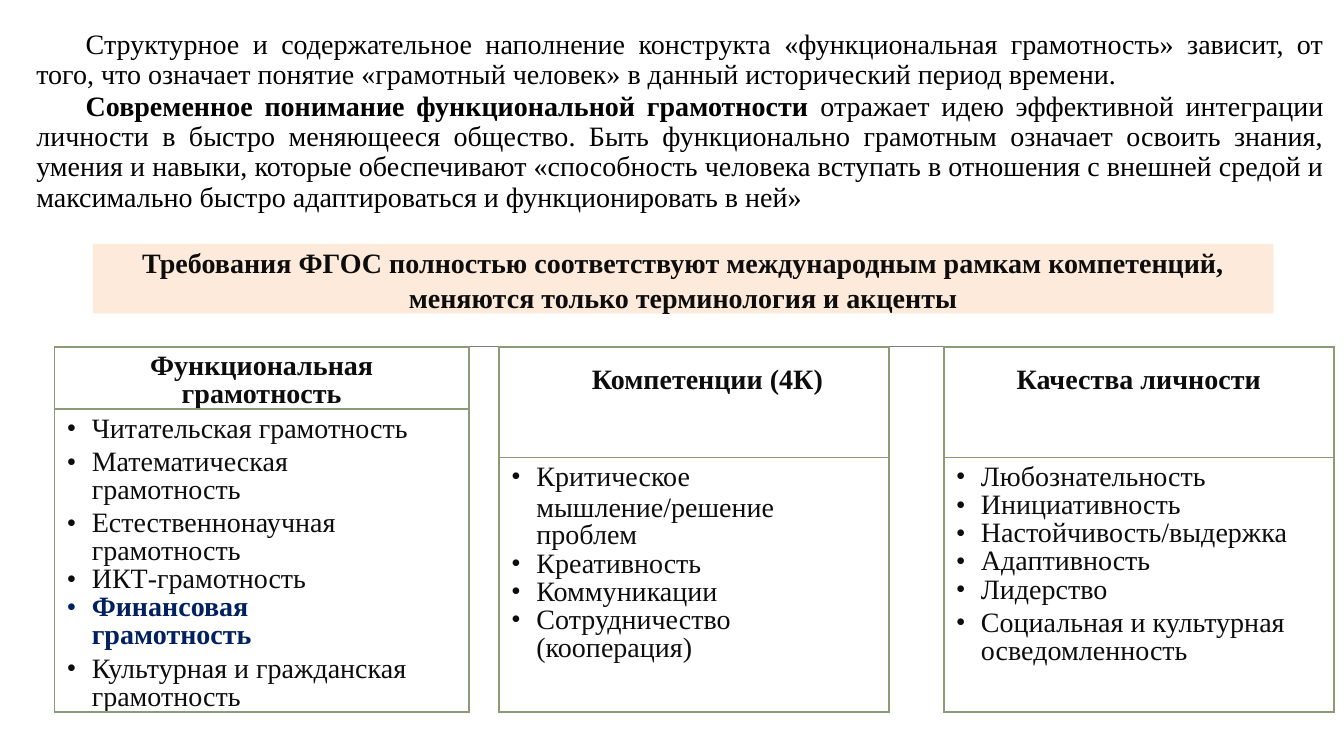
"""Build a slide on functional literacy: intro text, a banner and three boxed lists."""
from lxml import etree
from pptx import Presentation
from pptx.dml.color import RGBColor
from pptx.enum.text import MSO_ANCHOR, MSO_AUTO_SIZE, PP_ALIGN
from pptx.oxml.ns import qn
from pptx.util import Emu, Inches, Pt

CENTER, JUSTIFY, LEFT = PP_ALIGN.CENTER, PP_ALIGN.JUSTIFY, PP_ALIGN.LEFT
TOP, NO_AUTOFIT = MSO_ANCHOR.TOP, MSO_AUTO_SIZE.NONE

FONT, SIZE = "Times New Roman", 20
BLACK, INK, NAVY = "000000", "0D0D0D", "002060"
PEACH, GREEN, GRAY = "FDEADA", "8A9B76", "7E7E7E"

INTRO = [
    [("Структурное и содержательное наполнение конструкта «функциональная грамотность» "
      "зависит, от того, что означает понятие «грамотный человек» в данный исторический "
      "период времени.", False)],
    [("Современное понимание функциональной грамотности ", True),
     ("отражает идею эффективной интеграции личности в быстро меняющееся общество. Быть "
      "функционально грамотным означает освоить знания, умения и навыки, которые "
      "обеспечивают «способность человека вступать в отношения с внешней средой и "
      "максимально быстро адаптироваться и функционировать в ней»", False)],
]
BANNER = [
    "Требования ФГОС полностью соответствуют международным рамкам компетенций,",
    "меняются только терминология и акценты",
]
KEY_ITEM = "Финансовая грамотность"
CONTINUATION = "мышление/решение проблем"
GROUPS = [
    {"heading": ["Функциональная", "грамотность"], "align": CENTER, "indent": 0,
     "heading_top": 0.06, "heading_rows": 1, "right": 0.56,
     "items": [("Читательская грамотность", 5), ("Математическая грамотность", 3.9),
               ("Естественнонаучная грамотность", 3.6), ("ИКТ-грамотность", 0.1),
               (KEY_ITEM, 0.1), ("Культурная и гражданская грамотность", 3.9)]},
    {"heading": ["Компетенции (4К)"], "align": LEFT, "indent": 0.92,
     "heading_top": 0.2, "heading_rows": 2, "right": 0.3,
     "items": [("Критическое", 5), (CONTINUATION, 1.9), ("Креативность", 0.1),
               ("Коммуникации", 0.1), ("Сотрудничество (кооперация)", 0.1)]},
    {"heading": ["Качества личности"], "align": CENTER, "indent": 0,
     "heading_top": 0.2, "heading_rows": 2, "right": 0.3,
     "items": [("Любознательность", 5), ("Инициативность", 0.2),
               ("Настойчивость/выдержка", 0.1), ("Адаптивность", 0.1),
               ("Лидерство", 0.1), ("Социальная и культурная осведомленность", 3.9)]},
]
COLUMNS = [4.11, 0.3, 3.87, 0.54, 3.87]
ROWS = [0.61, 0.47, 2.53]
LAST_ROW = len(ROWS) - 1
PLAIN_TABLE = "{2D5ABB26-0587-4C30-8999-92F81FD0307C}"
THICK, THIN = (GREEN, 1.5), (GREEN, 0.75)


def color(value):
    return RGBColor.from_string(value)


def place(shape, left, top, width, height):
    shape.left, shape.top = Inches(left), Inches(top)
    shape.width, shape.height = Inches(width), Inches(height)


def write(frame, index, runs, align=LEFT, left=0, indent=0, before=0,
          spacing=0.9, ink=INK, bullet=False):
    paragraph = frame.paragraphs[0] if index == 0 else frame.add_paragraph()
    paragraph.alignment = align
    paragraph.line_spacing = spacing
    paragraph.space_before, paragraph.space_after = Pt(before), Pt(0)
    properties = paragraph._p.get_or_add_pPr()
    properties.set("marL", str(Inches(left)))
    properties.set("indent", str(Inches(indent)))
    if bullet:
        etree.SubElement(properties, qn("a:buFont")).set("typeface", FONT)
        etree.SubElement(properties, qn("a:buChar")).set("char", "•")
    else:
        etree.SubElement(properties, qn("a:buNone"))
    for text, bold in runs:
        run = paragraph.add_run()
        run.text = text
        run.font.name, run.font.size = FONT, Pt(SIZE)
        run.font.bold = bold
        run.font.color.rgb = color(ink)


def set_borders(cell, **edges):
    properties = cell._tc.get_or_add_tcPr()
    for position, side in enumerate(("left", "right", "top", "bottom")):
        line = etree.Element(qn("a:ln" + side[0].upper()))
        if edges.get(side):
            ink, width = edges[side]
            line.set("w", str(Pt(width)))
            fill = etree.SubElement(line, qn("a:solidFill"))
            etree.SubElement(fill, qn("a:srgbClr")).set("val", ink)
        else:
            etree.SubElement(line, qn("a:noFill"))
        properties.insert(position, line)


def set_margins(cell, top, right=0):
    cell.margin_left = cell.margin_bottom = Emu(0)
    cell.margin_top, cell.margin_right = Inches(top), Inches(right)


def add_intro(body):
    place(body, 0.08, 0.25, 13.15, 1.93)
    frame = body.text_frame
    frame.auto_size, frame.vertical_anchor = NO_AUTOFIT, TOP
    for index, runs in enumerate(INTRO):
        write(frame, index, runs, JUSTIFY, 0.18, 0.49, 1.1, ink=BLACK)


def add_banner(title):
    place(title, 0.92, 2.42, 11.71, 0.69)
    title.fill.solid()
    title.fill.fore_color.rgb = color(PEACH)
    frame = title.text_frame
    frame.auto_size, frame.vertical_anchor = NO_AUTOFIT, TOP
    frame.margin_left = frame.margin_right = frame.margin_bottom = Emu(0)
    frame.margin_top = Inches(0.02)
    for index, line in enumerate(BANNER):
        write(frame, index, [(line, True)], CENTER, before=1.4 if index == 0 else 0.3,
              spacing=1.0)


def fill_group(table, column, group):
    split = group["heading_rows"]
    divider = THICK if split == 1 else THIN
    for row in range(len(ROWS)):
        top, bottom = (THICK, divider) if row < split else (divider, THICK)
        set_borders(table.cell(row, column), left=THICK, right=THICK, top=top, bottom=bottom)
    heading, content = table.cell(0, column), table.cell(split, column)
    if split > 1:
        heading.merge(table.cell(split - 1, column))
    else:
        content.merge(table.cell(LAST_ROW, column))
    set_margins(heading, group["heading_top"])
    set_margins(content, 0.07, group["right"])
    for index, line in enumerate(group["heading"]):
        write(heading.text_frame, index, [(line, True)], group["align"], group["indent"],
              before=4 if index == 0 else 0)
    for index, (item, before) in enumerate(group["items"]):
        key, bullet = item == KEY_ITEM, item != CONTINUATION
        write(content.text_frame, index, [(item, key)], left=0.37,
              indent=-0.25 if bullet else 0, before=before,
              ink=NAVY if key else INK, bullet=bullet)


def add_groups(slide):
    frame = slide.shapes.add_table(len(ROWS), len(COLUMNS), Inches(0.54), Inches(3.44),
                                   Inches(sum(COLUMNS)), Inches(sum(ROWS)))
    table = frame.table
    table.first_row = table.horz_banding = False
    table._tbl.tblPr.find(qn("a:tableStyleId")).text = PLAIN_TABLE
    for column, width in zip(table.columns, COLUMNS):
        column.width = Inches(width)
    for row, height in zip(table.rows, ROWS):
        row.height = Inches(height)
    for cell in table.iter_cells():
        cell.fill.background()
        set_margins(cell, 0)
    for number, group in enumerate(GROUPS):
        fill_group(table, 2 * number, group)
    for gap in range(1, len(COLUMNS), 2):
        for row in range(len(ROWS)):
            set_borders(table.cell(row, gap), left=THICK, right=THICK,
                        top=(GRAY, 0.5) if row == 0 else None)
        table.cell(0, gap).merge(table.cell(LAST_ROW, gap))


def main():
    deck = Presentation()
    deck.slide_width, deck.slide_height = Inches(13.33), Inches(7.5)
    slide = deck.slides.add_slide(deck.slide_layouts[1])
    add_groups(slide)
    add_banner(slide.shapes.title)
    add_intro(slide.placeholders[1])
    deck.save("out.pptx")


if __name__ == "__main__":
    main()
